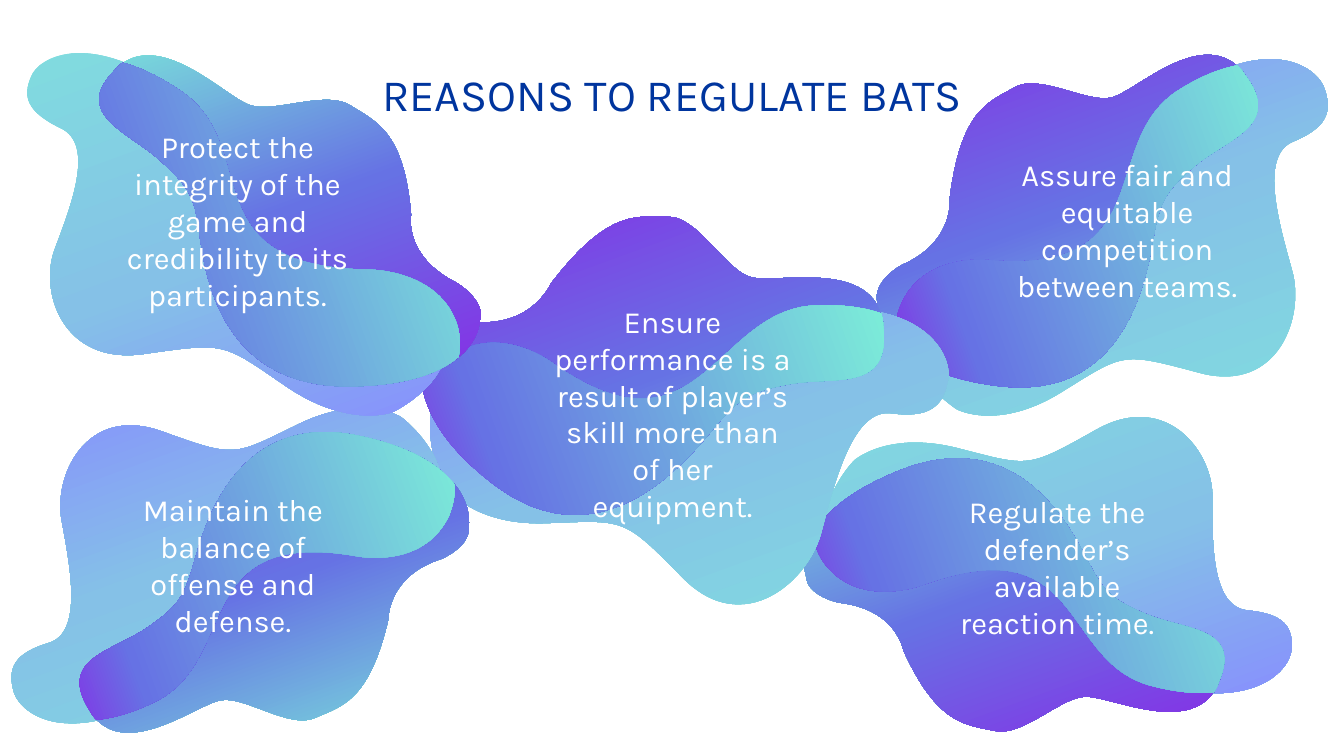
from lxml.etree import SubElement
from pptx import Presentation
from pptx.dml.color import RGBColor
from pptx.enum.text import MSO_ANCHOR, MSO_AUTO_SIZE, PP_ALIGN
from pptx.oxml.ns import qn
from pptx.util import Cm, Pt

CM_PER_INCH = 2.54

TAIL, TIP, CROWN = (4.4, 4.8), (9.4, 3.79), (6.62, 2.15)

PALE_STOPS = [(0, "80DEDE"), (54, "85C1E7"), (100, "878CFF")]
VIVID_STOPS = [(0, "7CEFD8"), (51, "6672E4"), (100, "882BE5")]
OVERLAP_STOPS = [(0, "882BE5"), (19, "6672E4"), (100, "7CEFD8")]
OVERLAP_ANGLE = 340

PALE_OUTLINE = [
    (5.61, 3.63),
    (7.08, 4.67), (7.21, 3.1), (8.22, 3.06),
    (9.22, 3.02), (9.46, 3.56), (9.4, 3.79),
    (9.35, 4.03), (9.22, 4.15), (8.84, 4.1),
    (8.46, 4.05), (8.28, 4.78), (8.15, 5.27),
    (8.03, 5.76), (7.38, 6.34), (6.78, 5.74),
    (6.18, 5.13), (6.21, 5.16), (5.43, 5.19),
    (4.65, 5.22), (4.4, 4.8), (4.4, 4.8),
    (4.4, 4.8), (4.03, 4.08), (4.52, 3.63),
    (5.02, 3.18), (5.61, 3.63), (5.61, 3.63),
]
VIVID_OUTLINE = [
    (4.25, 3.41),
    (4.25, 3.41), (3.86, 4), (4.89, 4.79),
    (5.91, 5.59), (6.74, 4.65), (7.02, 4.31),
    (7.31, 3.96), (7.4, 3.89), (7.84, 3.81),
    (8.28, 3.73), (8.84, 3.9), (8.76, 3.22),
    (8.68, 2.55), (7.7, 2.82), (7.45, 2.75),
    (7.2, 2.69), (6.92, 2.14), (6.62, 2.15),
    (6.32, 2.15), (6.03, 2.07), (5.46, 2.82),
    (5.46, 2.82), (5.27, 3.26), (4.67, 3.19),
    (4.67, 3.19), (4.32, 3.18), (4.25, 3.41),
]
OVERLAP_OUTLINE = [
    (4.89, 4.8),
    (4.42, 4.44), (4.25, 4.12), (4.2, 3.88),
    (4.24, 3.78), (4.3, 3.69), (4.39, 3.6),
    (4.89, 3.15), (5.48, 3.6), (5.48, 3.6),
    (6.95, 4.64), (7.08, 3.07), (8.09, 3.03),
    (8.36, 3.02), (8.57, 3.05), (8.74, 3.11),
    (8.75, 3.14), (8.76, 3.18), (8.76, 3.23),
    (8.84, 3.9), (8.28, 3.73), (7.84, 3.81),
    (7.4, 3.89), (7.31, 3.97), (7.03, 4.31),
    (6.74, 4.65), (5.92, 5.59), (4.89, 4.8),
]

REASONS = [
    {"anchors": [(8.47, 4.57), (12.81, 6.43), (9.86, 7.25)], "angle": 70,
     "box": (9.41, 4.84, 2.15, 1.95),
     "lines": ["Regulate the defender’s", "available reaction time."]},
    {"anchors": [(9.49, 4.06), (13.14, 0.89), (10.06, 0.87)], "angle": 250,
     "box": (9.98, 1.5, 2.4, 1.58),
     "lines": ["Assure fair and equitable competition between teams."]},
    {"anchors": [TAIL, TIP, CROWN], "angle": 250,
     "box": (5.35, 2.95, 2.64, 1.95),
     "lines": ["Ensure performance is a result of player’s skill more than "
               "of her equipment."]},
    {"anchors": [(3.98, 4.14), (0.13, 6.84), (3.13, 7.12)], "angle": 250,
     "box": (1.2, 4.82, 2.22, 1.95),
     "lines": ["Maintain the balance of offense and defense."]},
    {"anchors": [(3.89, 4.09), (0.31, 0.76), (3.48, 1.05)], "angle": 70,
     "box": (1.13, 1.22, 2.45, 1.95),
     "lines": ["Protect the integrity of the game and credibility to its "
               "participants."]},
]


def color(value):
    return RGBColor.from_string(value)


def length(inches):
    return Cm(inches * CM_PER_INCH)


def add_text(paragraph, text, size, fill, font="Karla", spacing=None):
    paragraph.alignment = PP_ALIGN.CENTER
    paragraph.line_spacing = spacing
    run = paragraph.add_run()
    run.text = text
    run.font.name = font
    run.font.size = Pt(size)
    run.font.bold = False
    run.font.color.rgb = color(fill)


def fill_gradient(shape, stops, angle):
    shape.fill.gradient()
    shape.fill.gradient_angle = (360 - angle) % 360
    stop_list = next(shape.element.iter(qn("a:gsLst")))
    for old_stop in list(stop_list):
        stop_list.remove(old_stop)
    for position, value in stops:
        stop = SubElement(stop_list, qn("a:gs"), pos=str(position * 1000))
        SubElement(stop, qn("a:srgbClr"), val=value)


def map_point(point, anchors):
    along = [TIP[axis] - TAIL[axis] for axis in (0, 1)]
    across = [CROWN[axis] - TAIL[axis] for axis in (0, 1)]
    offset = [point[axis] - TAIL[axis] for axis in (0, 1)]
    area = along[0] * across[1] - along[1] * across[0]
    tip_share = (offset[0] * across[1] - offset[1] * across[0]) / area
    crown_share = (along[0] * offset[1] - along[1] * offset[0]) / area
    tail, tip, crown = anchors
    return tuple(
        length(tail[axis] + tip_share * (tip[axis] - tail[axis])
               + crown_share * (crown[axis] - tail[axis]))
        for axis in (0, 1)
    )


def curve_segments(shape):
    segments = list(shape.element.iter(qn("a:lnTo")))
    for index in range(0, len(segments), 3):
        first, *others = segments[index:index + 3]
        curve = first.getparent().makeelement(qn("a:cubicBezTo"))
        first.addprevious(curve)
        for segment in (first, *others):
            curve.append(segment[0])
            segment.getparent().remove(segment)


def draw_blob(slide, outline, anchors, stops, angle):
    start, *controls = [map_point(point, anchors) for point in outline]
    builder = slide.shapes.build_freeform(*start, scale=1.0)
    builder.add_line_segments(controls, close=True)
    shape = builder.convert_to_shape()
    curve_segments(shape)
    shape.shadow.inherit = False
    shape.line.fill.background()
    fill_gradient(shape, stops, angle)


def draw_reason(slide, anchors, angle, box, lines):
    draw_blob(slide, PALE_OUTLINE, anchors, PALE_STOPS, angle)
    draw_blob(slide, VIVID_OUTLINE, anchors, VIVID_STOPS, angle)
    draw_blob(slide, OVERLAP_OUTLINE, anchors, OVERLAP_STOPS, OVERLAP_ANGLE)
    frame = slide.shapes.add_textbox(*map(length, box)).text_frame
    frame.word_wrap = True
    frame.auto_size = MSO_AUTO_SIZE.SHAPE_TO_FIT_TEXT
    for index, line in enumerate(lines):
        paragraph = frame.add_paragraph() if index else frame.paragraphs[0]
        add_text(paragraph, line, size=22, fill="FFFFFF")


def draw_title(slide, box, text):
    title = slide.shapes.title
    title.left, title.top, title.width, title.height = map(length, box)
    frame = title.text_frame
    frame.margin_left = frame.margin_right = 0
    frame.margin_top = frame.margin_bottom = 0
    frame.vertical_anchor = MSO_ANCHOR.TOP
    frame.auto_size = MSO_AUTO_SIZE.NONE
    frame.word_wrap = True
    add_text(frame.paragraphs[0], text, size=32, fill="00359E", spacing=0.9)


def main():
    presentation = Presentation()
    presentation.slide_width = length(13.33)
    presentation.slide_height = length(7.5)
    slide = presentation.slides.add_slide(presentation.slide_layouts[5])
    draw_title(slide, (3.02, 0.72, 7.3, 0.69), "REASONS TO REGULATE BATS")
    for reason in REASONS:
        draw_reason(slide, **reason)
    presentation.save("out.pptx")


if __name__ == "__main__":
    main()
